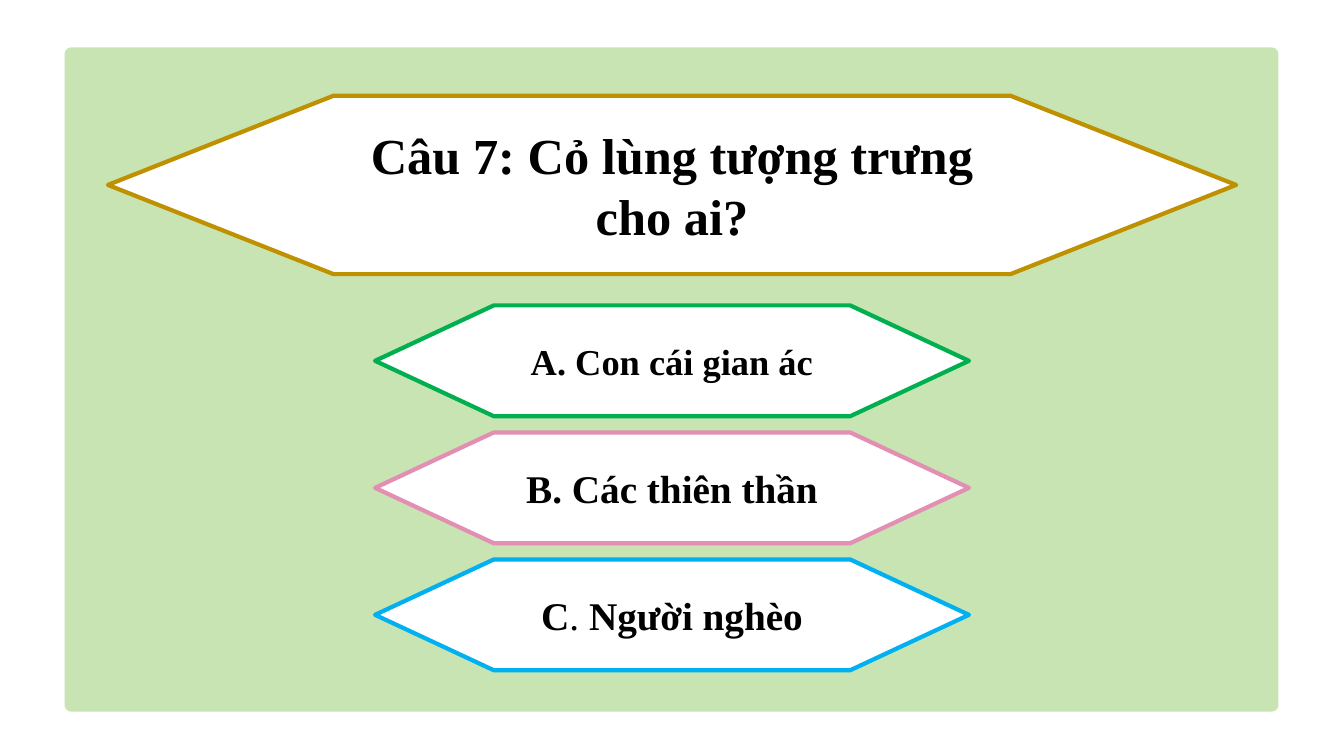
from dataclasses import dataclass

from pptx import Presentation
from pptx.dml.color import RGBColor
from pptx.enum.shapes import MSO_SHAPE
from pptx.enum.text import MSO_ANCHOR, PP_ALIGN
from pptx.util import Inches, Pt


@dataclass(frozen=True)
class Theme:
    font: str = "Times New Roman"
    panel: str = "C8E4B2"
    white: str = "FFFFFF"
    text: str = "000000"
    gold: str = "BF9000"
    green: str = "00B050"
    pink: str = "E28FB3"
    blue: str = "00B0F0"
    question_size: int = 36
    answer_size: int = 28
    long_answer_size: int = 26
    outline: int = 3


THEME = Theme()


def write_text(s, runs, *, size, color=THEME.text):
    """Write (text, bold) runs as one centred paragraph."""
    tf = s.text_frame
    tf.word_wrap = True
    tf.vertical_anchor = MSO_ANCHOR.MIDDLE
    p = tf.paragraphs[0]
    p.alignment = PP_ALIGN.CENTER
    for text, bold in runs:
        r = p.add_run()
        r.text = text
        r.font.name = THEME.font
        r.font.size = Pt(size)
        r.font.bold = bold
        r.font.color.rgb = RGBColor.from_string(color)


def add_filled(slide, kind, box, fill, line=None):
    s = slide.shapes.add_shape(kind, *(Inches(v) for v in box))
    s.shadow.inherit = False
    s.fill.solid()
    s.fill.fore_color.rgb = RGBColor.from_string(fill)
    if line:
        s.line.color.rgb = RGBColor.from_string(line)
        s.line.width = Pt(THEME.outline)
    else:
        s.line.fill.background()
    return s


def add_panel(slide, box):
    s = add_filled(slide, MSO_SHAPE.ROUNDED_RECTANGLE, box, THEME.panel)
    s.adjustments[0] = 0.01


def add_plaque(slide, box, runs, *, line, size):
    s = add_filled(slide, MSO_SHAPE.FLOWCHART_PREPARATION, box, THEME.white, line)
    write_text(s, runs, size=size)


def add_answers(slide, box, answers):
    """Stack the answers in the box at an equal pitch."""
    left, top, width, height = box
    plaque_height = 1.1
    pitch = (height - plaque_height) / (len(answers) - 1)
    for i, (runs, line, size) in enumerate(answers):
        add_plaque(slide, (left, top + i * pitch, width, plaque_height),
                   runs, line=line, size=size)


def build_quiz_slide(prs):
    slide = prs.slides.add_slide(prs.slide_layouts[6])

    # Background panel
    add_panel(slide, (0.64, 0.47, 12.04, 6.59))

    # Question
    add_plaque(slide, (1.07, 0.95, 11.19, 1.77),
               [("Câu 7: Cỏ lùng tượng trưng cho ai?", True)],
               line=THEME.gold, size=THEME.question_size)

    # Answers
    add_answers(slide, (3.72, 3.03, 5.89, 3.62), [
        ([("A. Con cái gian ác", True)], THEME.green, THEME.long_answer_size),
        ([("B. Các thiên thần", True)], THEME.pink, THEME.answer_size),
        ([("C", True), (". ", False), ("Người nghèo", True)],
         THEME.blue, THEME.answer_size),
    ])


def main():
    prs = Presentation()
    prs.slide_width = Inches(13.33)
    prs.slide_height = Inches(7.5)
    build_quiz_slide(prs)
    prs.save("out.pptx")


if __name__ == "__main__":
    main()
